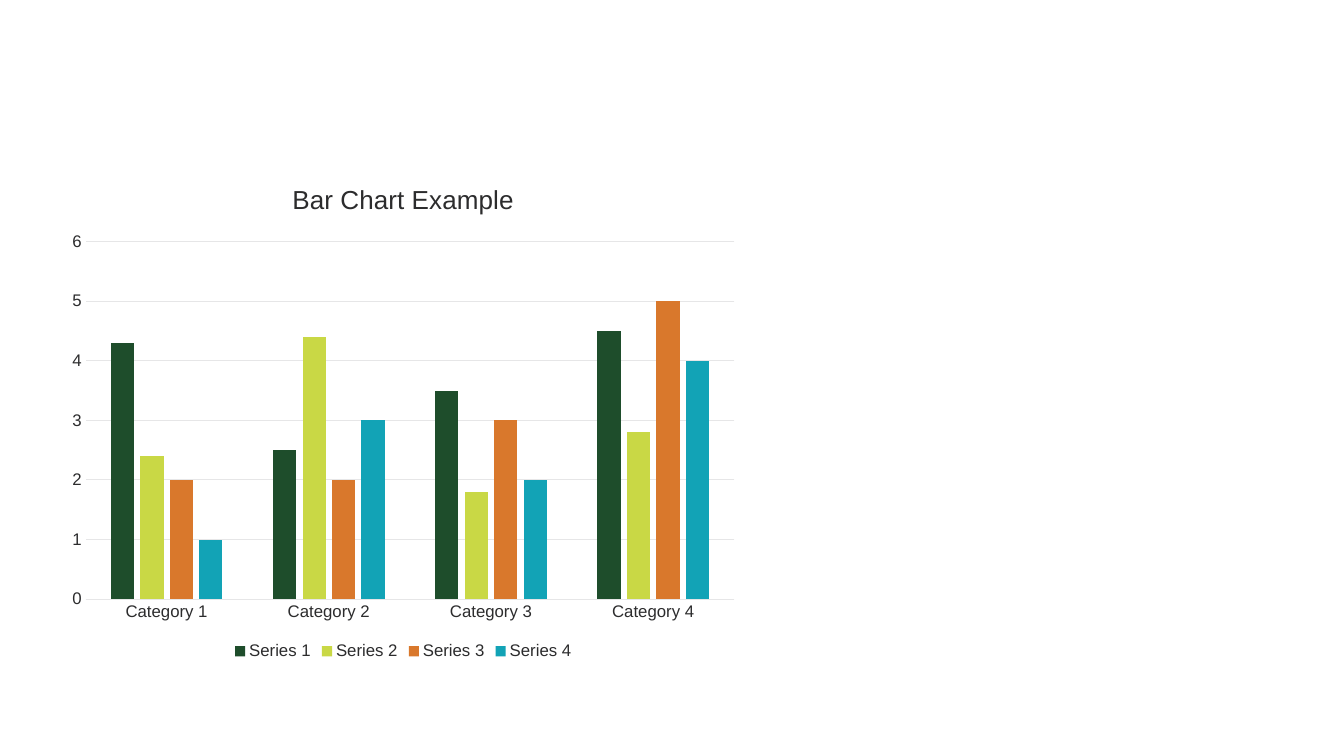
from pptx import Presentation
from pptx.chart.data import CategoryChartData
from pptx.dml.color import RGBColor
from pptx.enum import chart as kinds
from pptx.util import Inches, Pt

INK = "2C2C2D"
RULE = "E6E6E7"
CATEGORIES = ["Category 1", "Category 2", "Category 3", "Category 4"]
SERIES = [
    ("Series 1", (4.3, 2.5, 3.5, 4.5), "1E4D2B"),
    ("Series 2", (2.4, 4.4, 1.8, 2.8), "C9D845"),
    ("Series 3", (2, 2, 3, 5), "D9782C"),
    ("Series 4", (1, 3, 2, 4), "12A3B6"),
]


def colour(value):
    return RGBColor.from_string(value)


class Page:
    """Holds the text style and the current slide."""

    font_name = "Arial"

    def __init__(self, deck):
        self.slide = deck.slides.add_slide(deck.slide_layouts[6])

    def style_font(self, font, size, ink=INK):
        font.name = self.font_name
        font.size = Pt(size)
        font.bold = False
        font.color.rgb = colour(ink)

    def style_rule(self, line):
        line.color.rgb = colour(RULE)
        line.width = Pt(0.75)

    def style_axis(self, axis):
        axis.major_tick_mark = axis.minor_tick_mark = kinds.XL_TICK_MARK.NONE
        self.style_font(axis.tick_labels.font, 12)

    def column_chart(self, title, categories, series, left, top, width, height):
        data = CategoryChartData()
        data.categories = categories
        for name, values, _ in series:
            data.add_series(name, values)
        chart = self.slide.shapes.add_chart(
            kinds.XL_CHART_TYPE.COLUMN_CLUSTERED,
            Inches(left), Inches(top), Inches(width), Inches(height), data,
        ).chart
        self.style_font(chart.font, 10, "59595B")

        chart.has_title = True
        para = chart.chart_title.text_frame.paragraphs[0]
        span = para.add_run()
        span.text = title
        self.style_font(span.font, 18.6)
        chart.chart_title.include_in_layout = False

        chart.has_legend = True
        chart.legend.position = kinds.XL_LEGEND_POSITION.BOTTOM
        chart.legend.include_in_layout = False
        self.style_font(chart.legend.font, 12)

        self.style_axis(chart.category_axis)
        self.style_rule(chart.category_axis.format.line)
        self.style_axis(chart.value_axis)
        chart.value_axis.format.line.fill.background()
        chart.value_axis.tick_labels.number_format = "General"
        chart.value_axis.tick_labels.number_format_is_linked = False
        chart.value_axis.has_major_gridlines = True
        self.style_rule(chart.value_axis.major_gridlines.format.line)

        plot = chart.plots[0]
        plot.gap_width = 219
        plot.overlap = -27
        plot.vary_by_categories = False
        for columns, (_, _, fill) in zip(plot.series, series):
            columns.format.fill.solid()
            columns.format.fill.fore_color.rgb = colour(fill)
            columns.invert_if_negative = False


def main():
    deck = Presentation()
    deck.slide_width = Inches(13.33)
    deck.slide_height = Inches(7.5)
    page = Page(deck)
    page.column_chart("Bar Chart Example", CATEGORIES, SERIES, 0.58, 1.61, 6.84, 4.98)
    deck.save("out.pptx")


if __name__ == "__main__":
    main()
